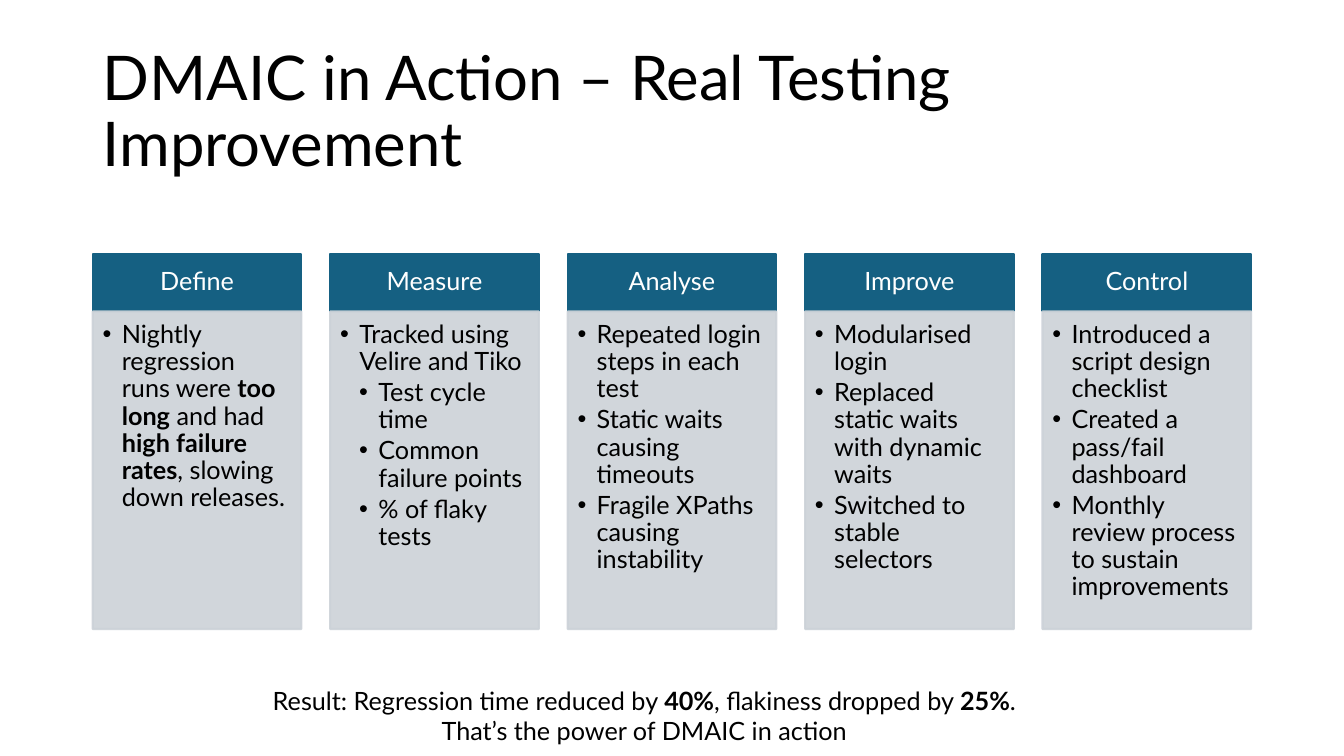
import pptx
import pptx.util
import pptx.dml.color
import pptx.enum.shapes
import pptx.enum.text
import pptx.oxml.ns
import lxml.etree

Inches = pptx.util.Inches
Pt = pptx.util.Pt
ALIGN = pptx.enum.text.PP_ALIGN
ANCHOR = pptx.enum.text.MSO_ANCHOR

TITLE = "DMAIC in Action – Real Testing Improvement"
PHASES = [
    ("Define", [
        (1, "Nightly regression runs were **too long** and had "
            "**high failure rates**, slowing down releases."),
    ]),
    ("Measure", [
        (1, "Tracked using Velire and Tiko"),
        (2, "Test cycle time"),
        (2, "Common failure points"),
        (2, "% of flaky tests"),
    ]),
    ("Analyse", [
        (1, "Repeated login steps in each test"),
        (1, "Static waits causing timeouts"),
        (1, "Fragile XPaths causing instability"),
    ]),
    ("Improve", [
        (1, "Modularised login"),
        (1, "Replaced static waits with dynamic waits"),
        (1, "Switched to stable selectors"),
    ]),
    ("Control", [
        (1, "Introduced a script design checklist"),
        (1, "Created a pass/fail dashboard"),
        (1, "Monthly review process to sustain improvements"),
    ]),
]
RESULT = ("Result: Regression time reduced by **40%**, flakiness dropped by "
          "**25%**. That’s the power of DMAIC in action")

THEME = {
    "font": "Lato",
    "title_size": 44,
    "text_size": 18,
    "ink": "000000",
    "header_ink": "FFFFFF",
    "header": "156082",
    "panel": "CCD2D8",
    "panel_alpha": 90,
    "outline": 1.5,
}

LEFT, PITCH, WIDTH = 0.92, 2.355, 2.07
HEADER_TOP, HEADER_HEIGHT, PANEL_HEIGHT = 2.52, 0.57, 3.15
BULLET_STEP = 0.19

TITLE_FRAME = {"word_wrap": True, "vertical_anchor": ANCHOR.MIDDLE}
RESULT_FRAME = {"word_wrap": True, "vertical_anchor": ANCHOR.TOP}
HEADER_FRAME = {
    "word_wrap": True, "vertical_anchor": ANCHOR.MIDDLE,
    "margin_left": Inches(0.14), "margin_right": Inches(0.14),
    "margin_top": Inches(0.08), "margin_bottom": Inches(0.08),
}
PANEL_FRAME = {
    "word_wrap": True, "vertical_anchor": ANCHOR.TOP,
    "margin_left": Inches(0.1), "margin_right": Inches(0.14),
    "margin_top": Inches(0.1), "margin_bottom": Inches(0.16),
}
TITLE_PARAGRAPH = {"alignment": ALIGN.LEFT, "line_spacing": 0.9}
HEADER_PARAGRAPH = {"alignment": ALIGN.CENTER, "line_spacing": 0.9}
RESULT_PARAGRAPH = {"alignment": ALIGN.CENTER}
BULLET_PARAGRAPH = {"alignment": ALIGN.LEFT, "line_spacing": 0.9, "space_after": Pt(2.7)}


def apply(target, values):
    for name, value in values.items():
        setattr(target, name, value)


def rgb(name):
    return pptx.dml.color.RGBColor.from_string(THEME[name])


def write(paragraph, text, values, size="text_size", ink="ink"):
    apply(paragraph, values)
    for index, part in enumerate(text.split("**")):
        run = paragraph.add_run()
        run.text = part
        apply(run.font, {"name": THEME["font"], "size": Pt(THEME[size]), "bold": index % 2 == 1})
        run.font.color.rgb = rgb(ink)


def add_bullet(paragraph, level):
    properties = paragraph._p.get_or_add_pPr()
    properties.set("marL", str(Inches(BULLET_STEP * level)))
    properties.set("indent", str(-Inches(BULLET_STEP)))
    bullet_font = lxml.etree.SubElement(properties, pptx.oxml.ns.qn("a:buFont"))
    bullet_font.set("typeface", "Arial")
    bullet = lxml.etree.SubElement(properties, pptx.oxml.ns.qn("a:buChar"))
    bullet.set("char", "•")


def add_box(shapes, left, top, height, color, frame):
    box = shapes.add_shape(pptx.enum.shapes.MSO_SHAPE.RECTANGLE,
                           Inches(left), Inches(top), Inches(WIDTH), Inches(height))
    box.shadow.inherit = False
    box.fill.solid()
    box.fill.fore_color.rgb = rgb(color)
    box.line.color.rgb = rgb(color)
    box.line.width = Pt(THEME["outline"])
    apply(box.text_frame, frame)
    return box


def set_alpha(box, percent):
    for color in box._element.spPr.iter(pptx.oxml.ns.qn("a:srgbClr")):
        alpha = lxml.etree.SubElement(color, pptx.oxml.ns.qn("a:alpha"))
        alpha.set("val", str(percent * 1000))


def add_text(shapes, place, text, frame, paragraph, size):
    box = shapes.add_textbox(*map(Inches, place))
    apply(box.text_frame, frame)
    write(box.text_frame.paragraphs[0], text, paragraph, size)


def add_phase(shapes, left, name, points):
    header = add_box(shapes, left, HEADER_TOP, HEADER_HEIGHT, "header", HEADER_FRAME)
    write(header.text_frame.paragraphs[0], name, HEADER_PARAGRAPH, ink="header_ink")
    panel = add_box(shapes, left, HEADER_TOP + HEADER_HEIGHT, PANEL_HEIGHT, "panel", PANEL_FRAME)
    set_alpha(panel, THEME["panel_alpha"])
    for index, (level, point) in enumerate(points):
        frame = panel.text_frame
        paragraph = frame.add_paragraph() if index else frame.paragraphs[0]
        write(paragraph, point, {**BULLET_PARAGRAPH, "level": level})
        add_bullet(paragraph, level)


def main():
    deck = pptx.Presentation()
    apply(deck, {"slide_width": Inches(13.33), "slide_height": Inches(7.5)})
    shapes = deck.slides.add_slide(deck.slide_layouts[6]).shapes
    add_text(shapes, (0.92, 0.4, 11.5, 1.45), TITLE, TITLE_FRAME, TITLE_PARAGRAPH, "title_size")
    for column, (name, points) in enumerate(PHASES):
        add_phase(shapes, LEFT + column * PITCH, name, points)
    add_text(shapes, (2.43, 6.75, 7.92, 0.71), RESULT, RESULT_FRAME, RESULT_PARAGRAPH, "text_size")
    deck.save("out.pptx")


if __name__ == "__main__":
    main()
